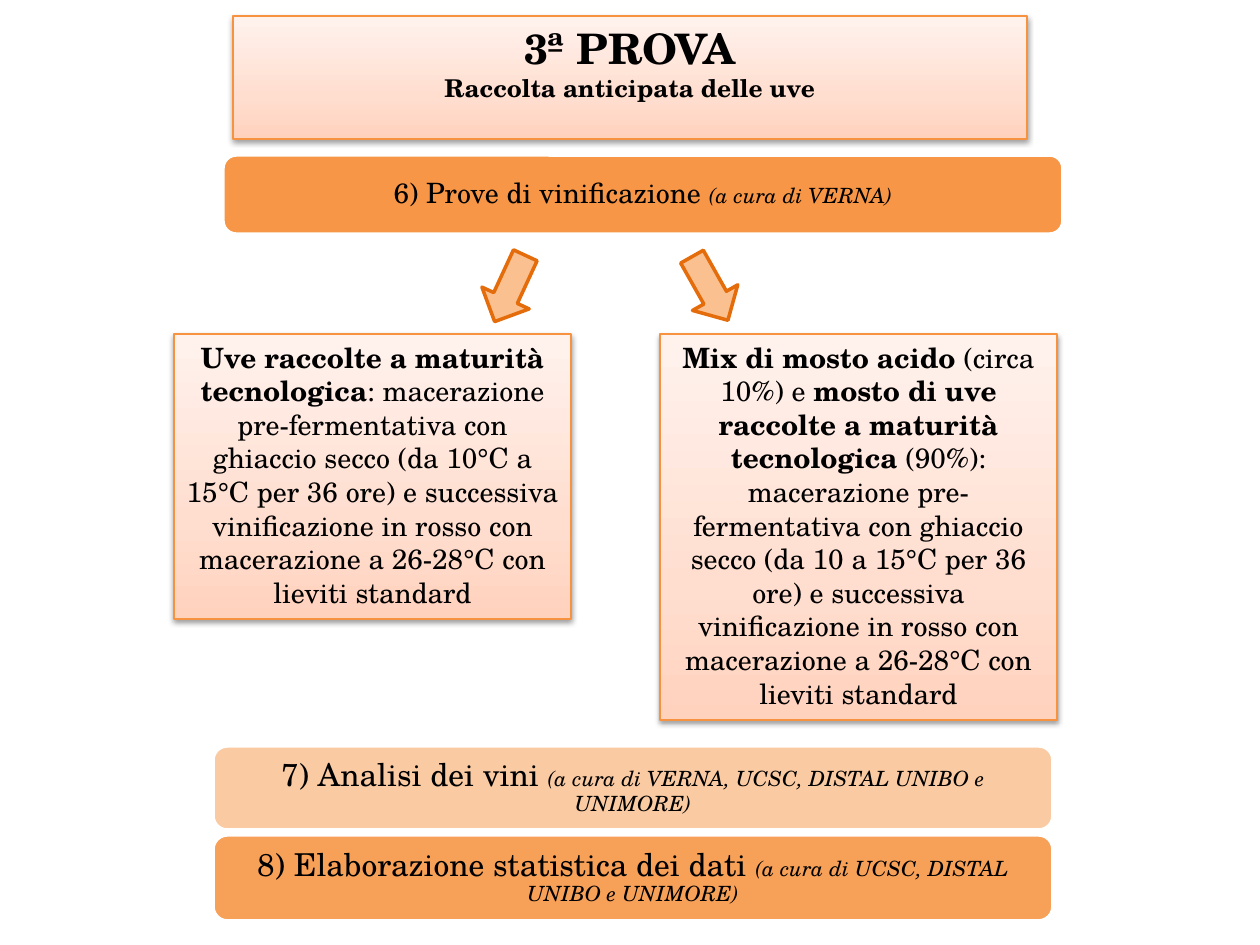
from copy import deepcopy
from dataclasses import dataclass

from lxml import etree
from pptx import Presentation
from pptx import util as u
from pptx.dml.color import RGBColor
from pptx.enum import shapes, text
from pptx.oxml.ns import qn

SCALE = 914400 // 126  # EMU per px


@dataclass(frozen=True)
class Theme:
    font: str = "TeX Gyre Schola"
    ink: str = "000000"
    bar: str = "F79646"
    bar_line: str = "FFFFFF"
    card_line: str = "F69240"
    card_stops: tuple = ((0, "FFD2BD"), (0.35, "FFDED0"), (1, "FFF2ED"))
    arrow: str = "FAC090"
    arrow_line: str = "E46C0A"
    title: int = 24
    step: int = 18
    body: int = 16
    subtitle: int = 14
    credit: int = 12


THEME = Theme()


def px(length):
    return u.Emu(length * SCALE)


def rgb(code):
    return RGBColor.from_string(code)


def add_box(slide, kind, place, line, width):
    box = slide.shapes.add_shape(kind, *map(px, place))
    box.shadow.inherit = False
    box.line.color.rgb = rgb(line)
    box.line.width = u.Pt(width)
    return box


def fill_solid(box, color, opacity=100):
    box.fill.solid()
    box.fill.fore_color.rgb = rgb(color)
    if opacity < 100:
        solid = box.element.spPr.find(qn("a:solidFill"))
        etree.SubElement(solid[0], qn("a:alpha"), val=str(opacity * 1000))


def fill_gradient(box, stops):
    box.fill.gradient()
    box.fill.gradient_angle = 90
    stop_list = box.element.spPr.find(qn("a:gradFill")).find(qn("a:gsLst"))
    stop_list.append(deepcopy(stop_list[0]))
    for stop, (position, color) in zip(box.fill.gradient_stops, stops):
        stop.position = position
        stop.color.rgb = rgb(color)


def add_shadow(box):
    effects = box.element.spPr.find(qn("a:effectLst"))
    shadow = etree.SubElement(effects, qn("a:outerShdw"), blurRad="40000",
                              dist="20000", dir="5400000", rotWithShape="0")
    color = etree.SubElement(shadow, qn("a:srgbClr"), val=THEME.ink)
    etree.SubElement(color, qn("a:alpha"), val="38000")


def write(box, paragraphs, anchor, spacing=None):
    """Each paragraph is a list of runs: (words, size, style)."""
    frame = box.text_frame
    frame.word_wrap = True
    frame.vertical_anchor = anchor
    for index, runs in enumerate(paragraphs):
        para = frame.add_paragraph() if index else frame.paragraphs[0]
        para.alignment = text.PP_ALIGN.CENTER
        if spacing:
            para.line_spacing = spacing
        for words, size, style in runs:
            span = para.add_run()
            span.text = words
            span.font.name = THEME.font
            span.font.size = u.Pt(size)
            span.font.color.rgb = rgb(THEME.ink)
            span.font.bold = style == "bold"
            span.font.italic = style == "italic"


def add_card(slide, place, paragraphs):
    card = add_box(slide, shapes.MSO_SHAPE.RECTANGLE, place, THEME.card_line, 0.75)
    fill_gradient(card, THEME.card_stops)
    add_shadow(card)
    write(card, paragraphs, text.MSO_ANCHOR.TOP)


def add_bar(slide, place, opacity, step, size, credit):
    bar = add_box(slide, shapes.MSO_SHAPE.ROUNDED_RECTANGLE, place, THEME.bar_line, 2)
    fill_solid(bar, THEME.bar, opacity)
    frame = bar.text_frame
    frame.margin_left = frame.margin_right = px(9)
    frame.margin_top = frame.margin_bottom = px(9)
    write(bar, [[(step + " ", size, ""), (credit, THEME.credit, "italic")]],
          text.MSO_ANCHOR.MIDDLE, 0.9)


def add_arrow(slide, left, angle):
    arrow = add_box(slide, shapes.MSO_SHAPE.DOWN_ARROW, (left, 252, 52, 73),
                    THEME.arrow_line, 2)
    fill_solid(arrow, THEME.arrow)
    arrow.rotation = angle


def main():
    deck = Presentation()
    deck.slide_width, deck.slide_height = px(1260), px(945)
    slide = deck.slides.add_slide(deck.slide_layouts[6])

    # Closing steps
    add_bar(slide, (213, 835, 840, 86), 90, "8) Elaborazione statistica dei dati",
            THEME.step, "(a cura di UCSC, DISTAL UNIBO e UNIMORE)")
    add_bar(slide, (213, 746, 840, 84), 50, "7) Analisi dei vini",
            THEME.step, "(a cura di VERNA, UCSC, DISTAL UNIBO e UNIMORE)")

    # Winemaking step
    add_bar(slide, (223, 155, 840, 79), 100, "6) Prove di vinificazione",
            THEME.body, "(a cura di VERNA)")

    # The two trials
    process = ("ore) e successiva vinificazione in rosso con macerazione "
               "a 26-28°C con lieviti standard")
    maceration = ": macerazione pre-fermentativa con ghiaccio secco (da "
    add_card(slide, (174, 334, 397, 285), [[
        ("Uve raccolte a maturità tecnologica", THEME.body, "bold"),
        (maceration + "10°C a 15°C per 36 " + process, THEME.body, ""),
    ]])
    add_card(slide, (660, 334, 397, 386), [[
        ("Mix di mosto acido", THEME.body, "bold"),
        (" (circa 10%) e ", THEME.body, ""),
        ("mosto di uve raccolte a maturità tecnologica ", THEME.body, "bold"),
        ("(90%)" + maceration + "10 a 15°C per 36 " + process, THEME.body, ""),
    ]])

    # Arrows to the trials
    add_arrow(slide, 484, 24.8)
    add_arrow(slide, 684, 330.5)

    # Title
    add_card(slide, (233, 16, 794, 123), [
        [("3ª PROVA", THEME.title, "bold")],
        [("Raccolta anticipata delle uve", THEME.subtitle, "bold")],
    ])

    deck.save("out.pptx")


if __name__ == "__main__":
    main()
